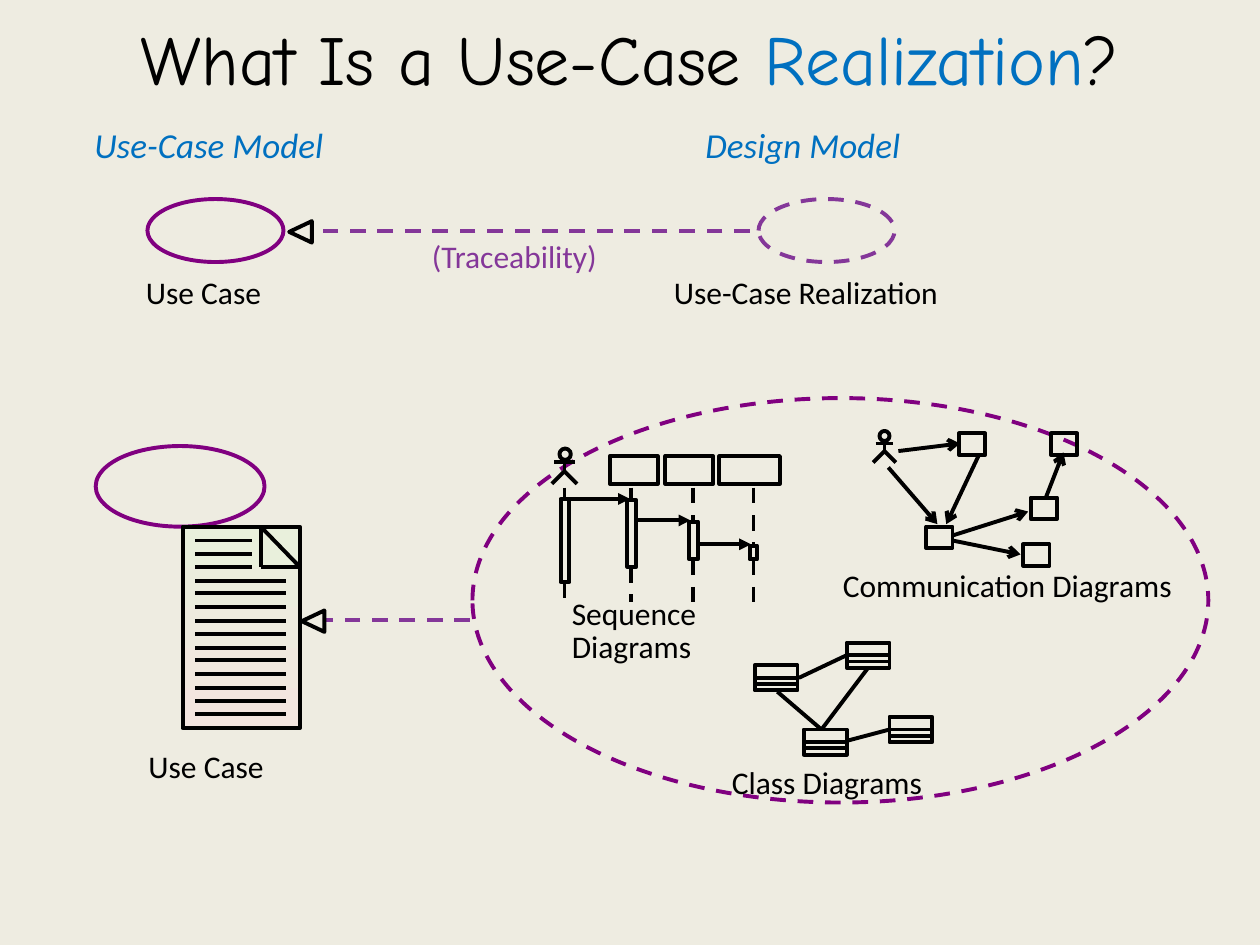
from dataclasses import dataclass

import pptx
import pptx.dml.color
import pptx.enum.dml
import pptx.enum.shapes
import pptx.enum.text
import pptx.oxml.ns
import pptx.util
from lxml import etree

SCALE = 9144
BLACK, BLUE, PURPLE, VIOLET = "000000", "0070C0", "800080", "843799"
KINDS = pptx.enum.shapes.MSO_SHAPE
DASH = pptx.enum.dml.MSO_LINE.DASH


@dataclass
class Actor:
    x: int
    top: int
    unit: int


@dataclass
class Lifeline:
    x: int
    bar_top: int
    bar_height: int
    bar_width: int = 7


@dataclass
class Label:
    text: str
    x: int
    y: int
    w: int
    h: int = 40
    size: int = 18
    color: str = BLACK
    italic: bool = False
    wrap: bool = True
    spacing: int = 0


def px(n: int) -> int:
    return pptx.util.Emu(n * SCALE)


def rgb(value: str) -> pptx.dml.color.RGBColor:
    return pptx.dml.color.RGBColor.from_string(value)


def apply(target, values: dict) -> None:
    for name, value in values.items():
        setattr(target, name, value)


def outline(obj, color: str, dashed: bool) -> None:
    obj.line.color.rgb = rgb(color)
    obj.line.width = pptx.util.Pt(2.25)
    if dashed:
        obj.line.dash_style = DASH


def shape(s, kind, x: int, y: int, w: int, h: int, color: str = BLACK, dashed: bool = False):
    sp = s.shapes.add_shape(kind, px(x), px(y), px(w), px(h))
    sp.shadow.inherit = False
    sp.fill.background()
    outline(sp, color, dashed)
    return sp


def line(s, x1: int, y1: int, x2: int, y2: int, color: str = BLACK,
         dashed: bool = False, arrow: str = "") -> None:
    c = s.shapes.add_connector(pptx.enum.shapes.MSO_CONNECTOR.STRAIGHT, px(x1), px(y1), px(x2), px(y2))
    outline(c, color, dashed)
    if arrow:
        ln = c.line._get_or_add_ln()
        etree.SubElement(ln, pptx.oxml.ns.qn("a:tailEnd"), type=arrow)
    etree.SubElement(c._element.spPr, pptx.oxml.ns.qn("a:effectLst"))


def path_line(s, points: list) -> None:
    builder = s.shapes.build_freeform(*points[0], scale=float(SCALE))
    builder.add_line_segments(points[1:], close=False)
    sp = builder.convert_to_shape()
    sp.shadow.inherit = False
    sp.fill.background()
    outline(sp, BLACK, False)


def add_run(p, text: str, color: str, values: dict) -> None:
    r = p.add_run()
    r.text = text
    apply(r.font, values)
    r.font.color.rgb = rgb(color)


def draw_label(s, label: Label) -> None:
    tf = s.shapes.add_textbox(px(label.x), px(label.y), px(label.w), px(label.h)).text_frame
    tf.word_wrap = label.wrap
    p = tf.paragraphs[0]
    if label.spacing:
        p.line_spacing = pptx.util.Pt(label.spacing)
    font = {"name": "Calibri", "size": pptx.util.Pt(label.size), "italic": label.italic}
    for i, text in enumerate(label.text.split("\n")):
        if i:
            p.add_line_break()
        add_run(p, text, label.color, font)


def draw_actor(s, a: Actor) -> None:
    u = a.unit
    hip = a.top + 2 * u
    shape(s, KINDS.OVAL, a.x - u // 2, a.top, u, u)
    line(s, a.x, a.top + u, a.x, hip)
    line(s, a.x - u + 1, a.top + u + 2, a.x + u - 1, a.top + u + 2)
    path_line(s, [(a.x - u - 1, hip + u + 1), (a.x, hip), (a.x + u + 1, hip + u + 1)])


def draw_lifeline(s, life: Lifeline) -> None:
    line(s, life.x, 387, life.x, life.bar_top, dashed=True)
    line(s, life.x, life.bar_top + life.bar_height, life.x, 478, dashed=True)
    shape(s, KINDS.RECTANGLE, life.x - life.bar_width // 2, life.bar_top, life.bar_width, life.bar_height)


def draw_class_box(s, x: int, y: int) -> None:
    shape(s, KINDS.RECTANGLE, x, y, 34, 20)
    for offset in (10, 15):
        line(s, x, y + offset, x + 34, y + offset)


def draw_document(s, x: int, y: int) -> None:
    page = shape(s, KINDS.RECTANGLE, x, y, 93, 160)
    page.fill.gradient()
    page.fill.gradient_angle = 270
    for stop, color in zip(page.fill.gradient_stops, ("E9F0DC", "F3E5DF")):
        stop.color.rgb = rgb(color)
    fold = [(x + 62, y), (x + 93, y + 32), (x + 62, y + 32)]
    for start, end in zip(fold, fold[1:] + fold[:1]):
        line(s, *start, *end)
    for i in range(14):
        row = y + 11 + round(i * 10.6)
        line(s, x + 10, row, x + (55 if i < 3 else 82), row)


def draw_trace(s, start: int, tip: int, y: int) -> None:
    line(s, start, y, tip + 17, y, VIOLET, True)
    shape(s, KINDS.ISOSCELES_TRIANGLE, tip, y - 8, 17, 18).rotation = 270


def draw_title(s) -> None:
    title = s.shapes.title
    apply(title, {"left": 0, "top": 0, "width": px(1000), "height": px(92)})
    title.text_frame.vertical_anchor = pptx.enum.text.MSO_ANCHOR.MIDDLE
    p = title.text_frame.paragraphs[0]
    p.alignment = pptx.enum.text.PP_ALIGN.CENTER
    font = {"name": "Comic Neue", "size": pptx.util.Pt(40)}
    for text, color in (("What Is a Use-Case ", BLACK), ("Realization", BLUE), ("?", BLACK)):
        add_run(p, text, color, font)


LABELS = [
    Label("Use-Case Model", 65, 93, 230, 43, 20, BLUE, True),
    Label("Design Model", 550, 93, 205, 43, 20, BLUE, True),
    Label("Use Case", 106, 212, 130, wrap=False),
    Label("Use-Case Realization", 525, 212, 262, wrap=False),
    Label("(Traceability)", 333, 183, 153, color=VIOLET, wrap=False),
    Label("Use Case", 108, 588, 169),
    Label("Sequence\nDiagrams", 444, 470, 153, 63, spacing=19),
    Label("Communication Diagrams", 659, 448, 282, 63, spacing=19),
    Label("Class Diagrams", 571, 601, 197, wrap=False),
]
ELLIPSES = [
    (375, 316, 584, 321, PURPLE, True),
    (76, 354, 134, 64, PURPLE, False),
    (117, 158, 108, 50, PURPLE, False),
    (602, 158, 108, 50, VIOLET, True),
]
ACTORS = [Actor(448, 356, 9), Actor(702, 342, 8)]
LIFELINES = [Lifeline(448, 396, 66), Lifeline(501, 397, 53), Lifeline(550, 414, 30), Lifeline(598, 433, 11, 6)]
SEQUENCE_HEADS = [(484, 38), (528, 38), (571, 48)]
MESSAGES = [(447, 500, 396), (504, 548, 413), (555, 596, 432)]
OBJECTS = [(761, 344), (735, 418), (812, 432), (818, 395), (834, 344)]
OBJECT_LINKS = [
    (705, 371, 744, 416), (713, 358, 762, 352), (756, 429, 810, 440),
    (756, 425, 816, 406), (830, 395, 844, 359), (777, 361, 751, 416),
]
CLASSES = [(599, 528), (672, 510), (638, 579), (706, 569)]
CLASS_LINKS = [(652, 579, 617, 549), (634, 538, 672, 520), (672, 588, 706, 579), (652, 579, 689, 530)]


def main() -> None:
    prs = pptx.Presentation()
    apply(prs, {"slide_width": px(1000), "slide_height": px(750)})
    s = prs.slides.add_slide(prs.slide_layouts[5])
    s.background.fill.solid()
    s.background.fill.fore_color.rgb = rgb("EEECE1")
    draw_title(s)
    for ellipse in ELLIPSES:
        shape(s, KINDS.OVAL, *ellipse)
    draw_document(s, 145, 418)
    for corner in CLASSES:
        draw_class_box(s, *corner)
    for link in CLASS_LINKS:
        line(s, *link)
    for actor in ACTORS:
        draw_actor(s, actor)
    for link in OBJECT_LINKS:
        line(s, *link, arrow="arrow")
    for x, y in OBJECTS:
        shape(s, KINDS.RECTANGLE, x, y, 21, 17)
    for start, end, y in MESSAGES:
        line(s, start, y, end, y, arrow="triangle")
    for life in LIFELINES:
        draw_lifeline(s, life)
    for x, width in SEQUENCE_HEADS:
        shape(s, KINDS.RECTANGLE, x, 362, width, 22)
    draw_trace(s, 595, 230, 183)
    draw_trace(s, 373, 240, 492)
    for label in LABELS:
        draw_label(s, label)
    prs.save("out.pptx")


if __name__ == "__main__":
    main()
